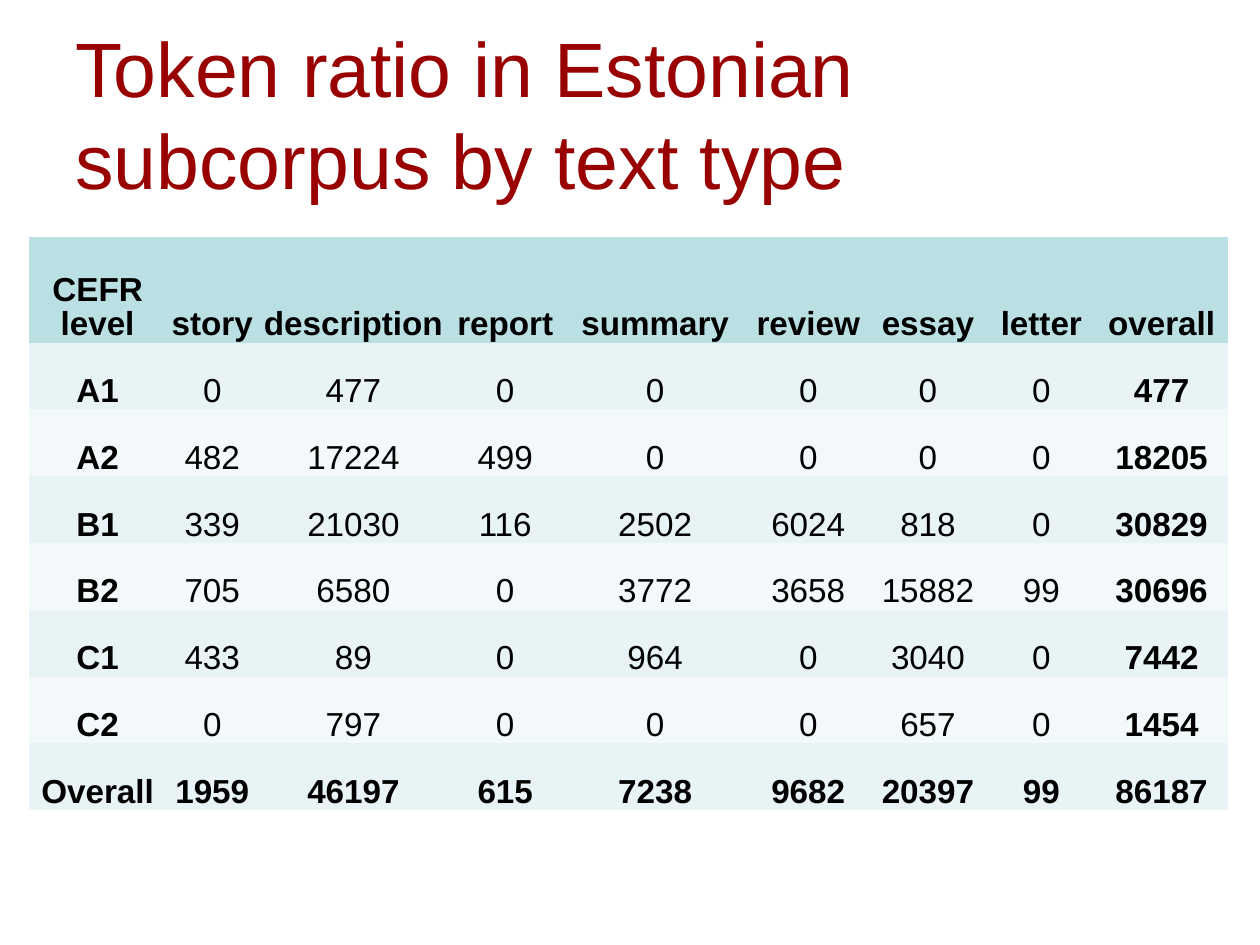
from dataclasses import dataclass

from pptx import Presentation
from pptx.dml.color import RGBColor
from pptx.enum.text import MSO_ANCHOR, PP_ALIGN
from pptx.oxml.ns import qn
from pptx.util import Inches, Pt

FONT = "Arial"
NO_STYLE = "{2D5ABB26-0587-4C30-8999-92F81FD0307C}"
HEADER_FILL = "BBE0E3"
BAND_FILLS = ("F3F9FA", "E7F3F4")
HEADER_HEIGHT, ROW_HEIGHT = 0.84, 0.53
COLUMN_WIDTHS = (1.09, 0.73, 1.51, 0.9, 1.48, 0.95, 0.95, 0.85, 1.06)


@dataclass
class TokenRow:
    """Token counts of one CEFR level by text type."""

    label: str
    counts: tuple
    bold: bool = False

    def texts(self) -> list:
        """Return the cell texts from left to right."""
        return [self.label, *map(str, self.counts)]


ROWS = (
    TokenRow("CEFR level", ("story", "description", "report", "summary",
                            "review", "essay", "letter", "overall"), True),
    TokenRow("A1", (0, 477, 0, 0, 0, 0, 0, 477)),
    TokenRow("A2", (482, 17224, 499, 0, 0, 0, 0, 18205)),
    TokenRow("B1", (339, 21030, 116, 2502, 6024, 818, 0, 30829)),
    TokenRow("B2", (705, 6580, 0, 3772, 3658, 15882, 99, 30696)),
    TokenRow("C1", (433, 89, 0, 964, 0, 3040, 0, 7442)),
    TokenRow("C2", (0, 797, 0, 0, 0, 657, 0, 1454)),
    TokenRow("Overall", (1959, 46197, 615, 7238, 9682, 20397, 99, 86187), True),
)


def color(value: str) -> RGBColor:
    """Turn a hex string into a colour."""
    return RGBColor.from_string(value)


def add_run(p, text: str, size: float, fill: str, bold: bool = False) -> None:
    """Append a formatted run to a paragraph."""
    r = p.add_run()
    r.text = text
    r.font.name = FONT
    r.font.size = Pt(size)
    r.font.bold = bold
    r.font.color.rgb = color(fill)


def add_title(slide, text: str) -> None:
    """Draw the slide title."""
    s = slide.shapes.add_textbox(Inches(0.5), Inches(0.11), Inches(9), Inches(1.57))
    tf = s.text_frame
    tf.word_wrap = True
    tf.vertical_anchor = MSO_ANCHOR.MIDDLE
    add_run(tf.paragraphs[0], text, 44, "990000")


def fill_cell(cell, text: str, fill: str, bold: bool) -> None:
    """Write one table cell."""
    cell.fill.solid()
    cell.fill.fore_color.rgb = color(fill)
    cell.vertical_anchor = MSO_ANCHOR.BOTTOM
    cell.margin_left = cell.margin_right = Inches(0.01)
    cell.margin_top, cell.margin_bottom = Inches(0.03), Inches(0)
    p = cell.text_frame.paragraphs[0]
    p.alignment = PP_ALIGN.CENTER
    p.line_spacing = 0.93
    add_run(p, text, 19, "000000", bold)


def add_token_table(slide, rows: tuple) -> None:
    """Draw the table of token counts."""
    height = HEADER_HEIGHT + ROW_HEIGHT * (len(rows) - 1)
    s = slide.shapes.add_table(len(rows), len(COLUMN_WIDTHS), Inches(0.23), Inches(1.88),
                               Inches(sum(COLUMN_WIDTHS)), Inches(height))
    table = s.table
    next(s._element.iter(qn("a:tableStyleId"))).text = NO_STYLE
    for column, width in zip(table.columns, COLUMN_WIDTHS):
        column.width = Inches(width)
    last = len(COLUMN_WIDTHS) - 1
    for i, row in enumerate(rows):
        table.rows[i].height = Inches(ROW_HEIGHT if i else HEADER_HEIGHT)
        fill = BAND_FILLS[i % 2] if i else HEADER_FILL
        for j, text in enumerate(row.texts()):
            fill_cell(table.cell(i, j), text, fill, row.bold or j in (0, last))


def main() -> None:
    """Build and save the slide."""
    prs = Presentation()
    prs.slide_width, prs.slide_height = Inches(10), Inches(7.5)
    slide = prs.slides.add_slide(prs.slide_layouts[6])
    add_title(slide, "Token ratio in Estonian subcorpus by text type")
    add_token_table(slide, ROWS)
    prs.save("out.pptx")


if __name__ == "__main__":
    main()
